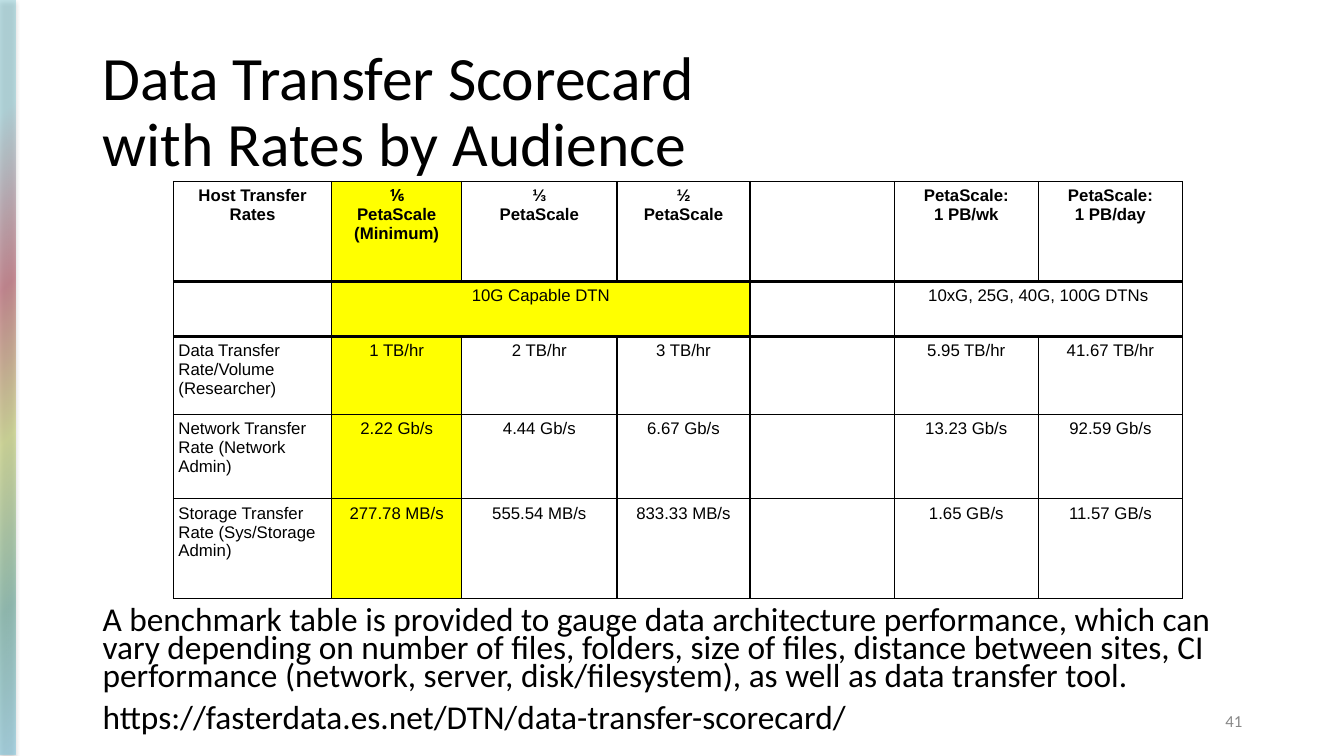
from lxml.etree import SubElement
from pptx import Presentation
from pptx.dml.color import RGBColor
from pptx.enum.shapes import MSO_SHAPE
from pptx.enum.text import MSO_ANCHOR, PP_ALIGN
from pptx.oxml import parse_xml
from pptx.oxml.ns import nsdecls, qn
from pptx.util import Pt

PX = 9144
BLACK = RGBColor(0x00, 0x00, 0x00)
GRAY = RGBColor(0x88, 0x88, 0x88)
YELLOW = RGBColor(0xFF, 0xFF, 0x00)

TITLE = ["Data Transfer Scorecard", "with Rates by Audience"]
BODY = [
    "A benchmark table is provided to gauge data architecture performance, "
    "which can vary depending on number of files, folders, size of files, "
    "distance between sites, CI performance (network, server, "
    "disk/filesystem), as well as data transfer tool.",
    "https://fasterdata.es.net/DTN/data-transfer-scorecard/",
]
ROWS = [
    ["Host Transfer Rates", "⅙\nPetaScale\n(Minimum)", "⅓\nPetaScale",
     "½\nPetaScale", "", "PetaScale:\n1 PB/wk", "PetaScale:\n1 PB/day"],
    ["", "10G Capable DTN", "", "", "", "10xG, 25G, 40G, 100G DTNs", ""],
    ["Data Transfer Rate/Volume (Researcher)", "1 TB/hr", "2 TB/hr",
     "3 TB/hr", "", "5.95 TB/hr", "41.67 TB/hr"],
    ["Network Transfer Rate (Network Admin)", "2.22 Gb/s", "4.44 Gb/s",
     "6.67 Gb/s", "", "13.23 Gb/s", "92.59 Gb/s"],
    ["Storage Transfer Rate (Sys/Storage Admin)", "277.78 MB/s",
     "555.54 MB/s", "833.33 MB/s", "", "1.65 GB/s", "11.57 GB/s"],
]
DTN_ROW = 1
DTN_SPANS = [(1, 3), (5, 6)]
MINIMUM_COL = 1
COL_W = [157, 129, 154, 132, 143, 143, 143]
ROW_H = [99, 55, 77, 84, 99]
BAR_STOPS = [(0, "6CBFDC"), (20, "459582"), (42, "BAC851"),
             (62, "A42E40"), (85, "84C8D3"), (100, "84C8D3")]


def px(*lengths):
    return [n * PX for n in lengths]


def add_bar(slide):
    sp = slide.shapes.add_shape(MSO_SHAPE.RECTANGLE, *px(0, 0, 15, 749))
    sp.line.fill.background()
    stops = "".join(
        f'<a:gs pos="{pos * 1000}"><a:srgbClr val="{color}">'
        '<a:alpha val="49000"/></a:srgbClr></a:gs>'
        for pos, color in BAR_STOPS)
    gradient = parse_xml(
        f'<a:gradFill {nsdecls("a")}><a:gsLst>{stops}</a:gsLst>'
        '<a:path path="circle"><a:fillToRect l="100000" t="100000"/></a:path>'
        '</a:gradFill>')
    shadow = parse_xml(
        f'<a:effectLst {nsdecls("a")}><a:outerShdw blurRad="{Pt(3.1)}" '
        f'dist="{Pt(1.8)}" dir="5400000" rotWithShape="0">'
        '<a:srgbClr val="000000"><a:alpha val="34000"/></a:srgbClr>'
        '</a:outerShdw></a:effectLst>')
    ln = sp.line._get_or_add_ln()
    ln.addprevious(gradient)
    ln.addnext(shadow)


def add_text(slide, box, lines, size, color=BLACK, spacing=1.0, gap=0,
             align=PP_ALIGN.LEFT, anchor=MSO_ANCHOR.MIDDLE):
    tf = slide.shapes.add_textbox(*px(*box)).text_frame
    tf.word_wrap = True
    tf.vertical_anchor = anchor
    tf.text = "\n".join(lines)
    for i, p in enumerate(tf.paragraphs):
        p.alignment = align
        p.line_spacing = spacing
        if i:
            p.space_before = Pt(gap)
        p.font.name = "Calibri"
        p.font.size = Pt(size)
        p.font.color.rgb = color


def set_borders(cell, row):
    top = 2.25 if row in (DTN_ROW, DTN_ROW + 1) else 1
    bottom = 2.25 if row in (DTN_ROW - 1, DTN_ROW) else 1
    tcPr = cell._tc.get_or_add_tcPr()
    sides = zip(("lnL", "lnR", "lnT", "lnB"), (1, 1, top, bottom))
    for i, (side, width) in enumerate(sides):
        ln = SubElement(tcPr, qn(f"a:{side}"), w=str(Pt(width)))
        fill = SubElement(ln, qn("a:solidFill"))
        SubElement(fill, qn("a:srgbClr"), val=str(BLACK))
        tcPr.insert(i, ln)


def add_scorecard(slide):
    table = slide.shapes.add_table(
        len(ROWS), len(COL_W),
        *px(172, 180, sum(COL_W), sum(ROW_H))).table
    table.first_row = table.horz_banding = False
    for column, w in zip(table.columns, COL_W):
        column.width = w * PX
    for row, h in zip(table.rows, ROW_H):
        row.height = h * PX
    for first, last in DTN_SPANS:
        table.cell(DTN_ROW, first).merge(table.cell(DTN_ROW, last))
    for r, texts in enumerate(ROWS):
        for c, text in enumerate(texts):
            cell = table.cell(r, c)
            cell.text = text
            cell.margin_left = cell.margin_right = 5 * PX
            cell.margin_top = cell.margin_bottom = 5 * PX
            if c == MINIMUM_COL:
                cell.fill.solid()
                cell.fill.fore_color.rgb = YELLOW
            else:
                cell.fill.background()
            set_borders(cell, r)
            for p in cell.text_frame.paragraphs:
                p.alignment = PP_ALIGN.CENTER if c or not r else PP_ALIGN.LEFT
                p.font.name = "Arial"
                p.font.size = Pt(12)
                p.font.bold = r == 0
                p.font.color.rgb = BLACK


def main():
    prs = Presentation()
    prs.slide_width, prs.slide_height = px(1333, 750)
    slide = prs.slides.add_slide(prs.slide_layouts[6])
    add_bar(slide)
    add_text(slide, (92, 40, 1150, 145), TITLE, 44, spacing=0.9)
    add_text(slide, (92, 599, 1150, 154), BODY, 23.8, spacing=0.7, gap=10,
             anchor=MSO_ANCHOR.TOP)
    add_text(slide, (942, 695, 300, 40), ["41"], 12, GRAY,
             align=PP_ALIGN.RIGHT)
    add_scorecard(slide)
    prs.save("out.pptx")


if __name__ == "__main__":
    main()
